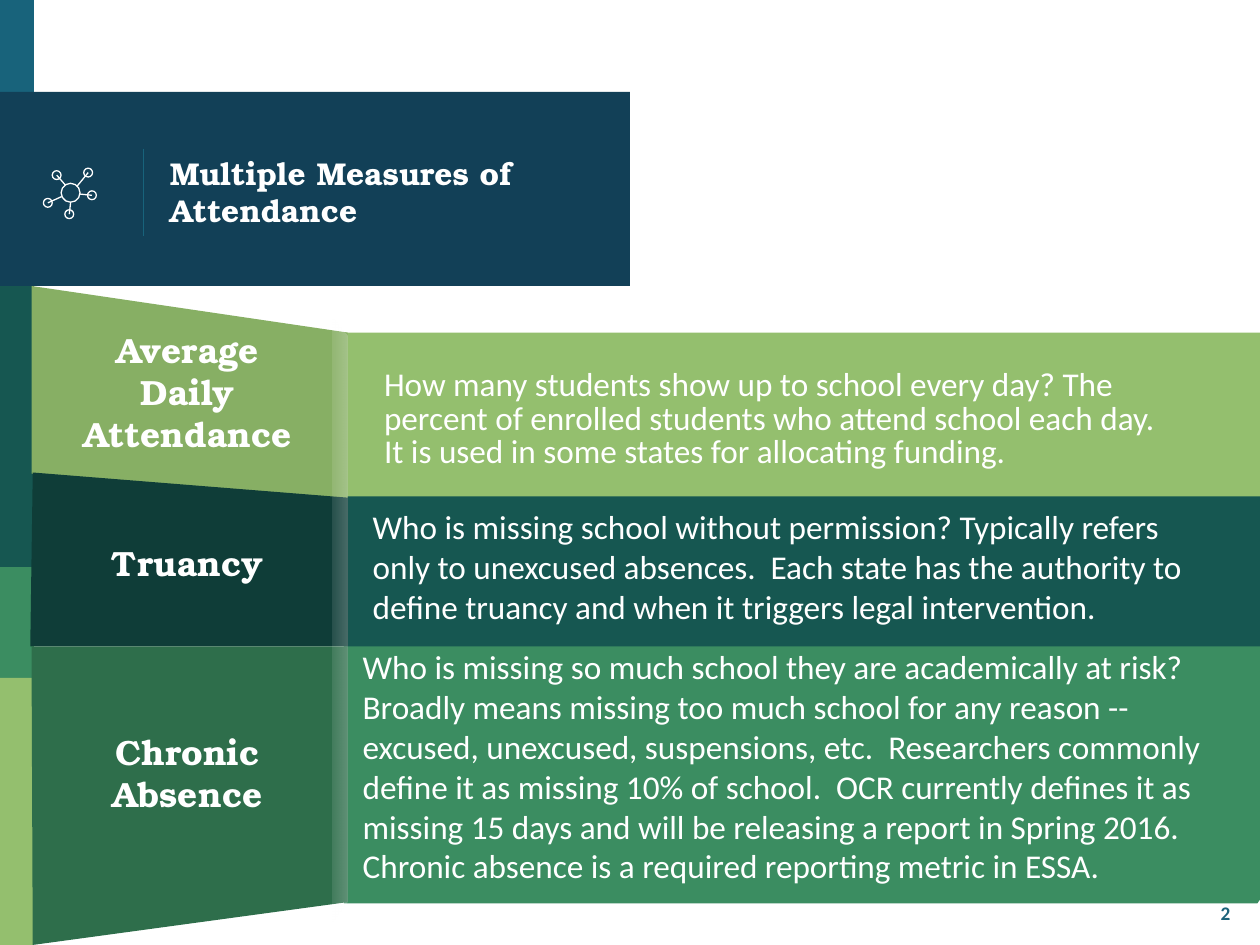
import pptx
import pptx.util
import pptx.dml.color
import pptx.enum.shapes
import pptx.enum.text
import pptx.oxml.ns
from lxml import etree

Inches = pptx.util.Inches
SHAPE = pptx.enum.shapes.MSO_SHAPE
ALIGN = pptx.enum.text.PP_ALIGN
ANCHOR = pptx.enum.text.MSO_ANCHOR
qn = pptx.oxml.ns.qn

SERIF, SANS = "TeX Gyre Bonum", "Calibri"
COLORS = {
    "white": "FFFFFF", "blue": "18637B", "navy": "124057", "number": "1B637A",
    "teal": "165751", "green": "3B8D61", "lime": "94BF6E",
    "lime_side": "87AF64", "teal_side": "0F3D38", "green_side": "2E6E4B",
}

# top, height, colour
STRIPS = [(0, 0.77, "blue"), (2.27, 2.23, "teal"),
          (4.5, 0.88, "green"), (5.38, 2.12, "lime")]

# left, top, width, height, colour
BANDS = [(2.73, 5.02, 8.01, 2.15, "green"), (2.73, 2.64, 7.79, 1.34, "lime"),
         (2.73, 3.94, 7.79, 1.19, "teal")]

SIDES = [
    ("lime_side", [(0.25, 2.27), (2.76, 2.64), (2.76, 4), (0.25, 3.76)]),
    ("teal_side", [(0.26, 3.75), (2.76, 3.95), (2.76, 5.13), (0.24, 5.13)]),
    ("green_side", [(0.26, 7.5), (2.76, 7.16), (2.76, 5.13), (0.25, 5.13)]),
]
FOLD = [(2.76, 7.14), (2.76, 2.67), (2.64, 2.52), (2.64, 7.31)]

# top, height, lines
LABELS = [(2.56, 1.11, ["Average Daily Attendance"]), (4.25, 0.44, ["Truancy"]),
          (5.75, 0.77, ["Chronic", "Absence"])]

DAILY = ("How many students show up to school every day? The percent of enrolled "
         "students who attend school each day.  It is used in some states for "
         "allocating funding.")
TRUANT = ("Who is missing school without permission? Typically refers only to "
          "unexcused absences.  Each state has the authority to define truancy "
          "and when it triggers legal intervention.")
CHRONIC = ("Who is missing so much school they are academically at risk? Broadly "
           "means missing too much school for any reason -- excused, unexcused, "
           "suspensions, etc.  Researchers commonly define it as missing 10% of "
           "school.  OCR currently defines it as missing 15 days and will be "
           "releasing a report in Spring 2016.  Chronic absence is a required "
           "reporting metric in ESSA.")

# centre x, centre y, diameter
NODES = [(0.7, 1.37, 0.07), (0.45, 1.39, 0.07), (0.38, 1.61, 0.07),
         (0.55, 1.7, 0.07), (0.73, 1.55, 0.07), (0.56, 1.53, 0.15)]
SPOKES = [(0.45, 1.39, 0.52, 1.47), (0.61, 1.48, 0.7, 1.37),
          (0.73, 1.55, 0.63, 1.54), (0.55, 1.7, 0.56, 1.61),
          (0.38, 1.61, 0.49, 1.56)]


def color(name):
    return pptx.dml.color.RGBColor.from_string(COLORS[name])


def paint(shape, name):
    """Give a plain fill with no outline and no shadow."""
    shape.shadow.inherit = False
    shape.fill.solid()
    shape.fill.fore_color.rgb = color(name)
    shape.line.fill.background()


def add_block(slide, kind, left, top, width, height, name):
    shape = slide.shapes.add_shape(
        kind, Inches(left), Inches(top), Inches(width), Inches(height))
    paint(shape, name)
    return shape


def add_side(slide, points, name):
    start, *rest = [(Inches(x), Inches(y)) for x, y in points]
    pen = slide.shapes.build_freeform(*start)
    pen.add_line_segments(rest, close=True)
    shape = pen.convert_to_shape()
    paint(shape, name)
    return shape


def add_fold(slide):
    """Add the pale see-through strip along the fold."""
    shape = add_side(slide, FOLD, "white")
    shape.fill.gradient()
    shape.fill.gradient_angle = 0
    for stop, alpha in zip(shape.fill.gradient_stops, (10, 25)):
        stop.color.rgb = color("white")
    for tone, alpha in zip(shape._element.spPr.iter(qn("a:srgbClr")), (10, 25)):
        etree.SubElement(tone, qn("a:alpha"), val=str(alpha * 1000))


def add_line(slide, x1, y1, x2, y2, name):
    line = slide.shapes.add_connector(
        pptx.enum.shapes.MSO_CONNECTOR.STRAIGHT,
        Inches(x1), Inches(y1), Inches(x2), Inches(y2))
    line.line.color.rgb = color(name)
    line.line.width = pptx.util.Pt(0.75)
    etree.SubElement(line._element.spPr, qn("a:effectLst"))


def add_node(slide, x, y, size):
    node = add_block(slide, SHAPE.OVAL, x - size / 2, y - size / 2,
                     size, size, "white")
    node.fill.background()
    node.line.color.rgb = color("white")
    node.line.width = pptx.util.Pt(0.75)


def add_text(slide, place, lines, size, face=SANS, tint="white", bold=False,
             align=ALIGN.LEFT, anchor=ANCHOR.TOP, base=0.05, space=None):
    """Add a text box; base is the bottom margin, space the line spacing."""
    box = slide.shapes.add_textbox(*map(Inches, place))
    frame = box.text_frame
    frame.word_wrap = True
    frame.vertical_anchor = anchor
    frame.margin_bottom = Inches(base)
    frame.text = "\n".join(lines)
    for para in frame.paragraphs:
        para.alignment = align
        para.line_spacing = space
        para.font.name = face
        para.font.size = pptx.util.Pt(size)
        para.font.bold = bold
        para.font.color.rgb = color(tint)


def add_header(slide):
    for top, height, name in STRIPS:
        add_block(slide, SHAPE.RECTANGLE, 0, top, 0.27, height, name)
    add_block(slide, SHAPE.RECTANGLE, 0, 0.73, 5, 1.54, "navy")
    add_line(slide, 1.14, 1.18, 1.14, 1.87, "blue")
    add_text(slide, (9.59, 7.1, 0.5, 0.29), ["2"], 11, tint="number", bold=True)
    add_text(slide, (1.25, 0.77, 3.51, 1.5), ["Multiple Measures of Attendance"],
             18, SERIF, bold=True, anchor=ANCHOR.MIDDLE)
    for node in NODES:
        add_node(slide, *node)
    for spoke in SPOKES:
        add_line(slide, *spoke, "white")


def add_rows(slide):
    for *place, name in BANDS:
        band = add_block(slide, SHAPE.PENTAGON, *place, name)
        band.adjustments[0] = 0.354
    for name, points in SIDES:
        add_side(slide, points, name)
    add_fold(slide)
    for top, height, lines in LABELS:
        add_text(slide, (0.56, top, 1.86, height), lines, 20, SERIF,
                 bold=True, align=ALIGN.CENTER)
    add_text(slide, (2.95, 3.04, 6.47, 0.87), [DAILY], 19,
             anchor=ANCHOR.MIDDLE, base=0.33, space=0.83)
    add_text(slide, (2.86, 4.18, 6.83, 0.87), [TRUANT], 19,
             anchor=ANCHOR.MIDDLE, base=0.29)
    add_text(slide, (2.78, 5.08, 7.05, 2.32), [CHRONIC], 19)


def main():
    deck = pptx.Presentation()
    deck.slide_width, deck.slide_height = Inches(10), Inches(7.5)
    slide = deck.slides.add_slide(deck.slide_layouts[6])
    add_header(slide)
    add_rows(slide)
    deck.save("out.pptx")


if __name__ == "__main__":
    main()
